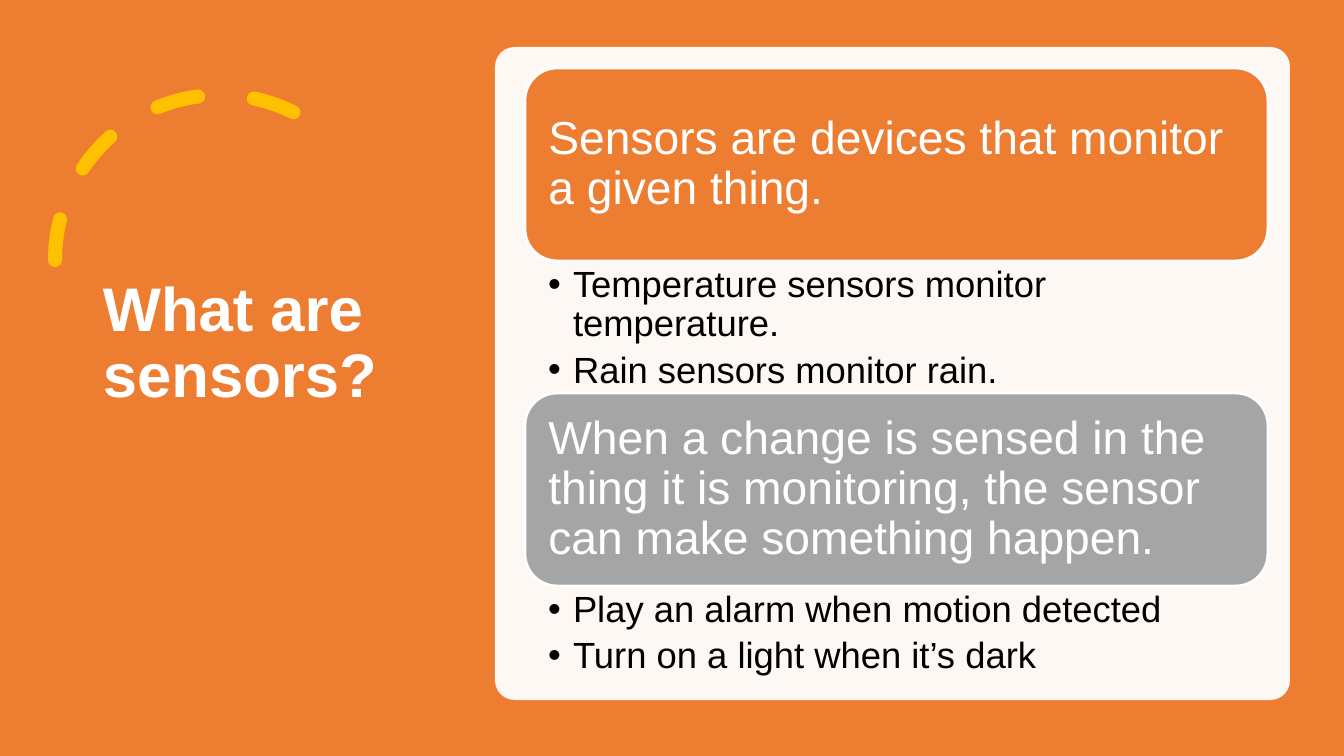
from dataclasses import dataclass

from lxml import etree
from pptx import Presentation
from pptx.dml.color import RGBColor
from pptx.enum.dml import MSO_LINE
from pptx.enum.shapes import MSO_SHAPE
from pptx.enum.text import MSO_ANCHOR, MSO_AUTO_SIZE, PP_ALIGN
from pptx.oxml.ns import qn
from pptx.util import Pt

RECTANGLE = MSO_SHAPE.RECTANGLE
ROUNDED = MSO_SHAPE.ROUNDED_RECTANGLE
ARC = MSO_SHAPE.ARC
DASH = MSO_LINE.DASH
LEFT = PP_ALIGN.LEFT
TOP = MSO_ANCHOR.TOP
MIDDLE = MSO_ANCHOR.MIDDLE
NO_AUTOFIT = MSO_AUTO_SIZE.NONE

SLIDE_WIDTH, SLIDE_HEIGHT = 1344, 756
EMU_PER_PX = 12192000 / SLIDE_WIDTH
TWO_CONTENT_LAYOUT = 3
COLUMN_LEFT, COLUMN_WIDTH = 525, 743
CARD_HEIGHT = 193
BULLET_INDENT = 25


@dataclass(frozen=True)
class Theme:
    font: str = "Arial"
    orange: str = "ED7D31"
    gray: str = "A5A5A5"
    yellow: str = "FFC000"
    white: str = "FFFFFF"
    black: str = "000000"
    title_size: int = 44
    card_size: int = 33
    list_size: int = 26


THEME = Theme()

SECTIONS = [
    (68, THEME.orange, "Sensors are devices that monitor a given thing.", 132,
     ["Temperature sensors monitor temperature.", "Rain sensors monitor rain."]),
    (393, THEME.gray,
     "When a change is sensed in the thing it is monitoring, "
     "the sensor can make something happen.", 94,
     ["Play an alarm when motion detected", "Turn on a light when it’s dark"]),
]


def px(length):
    return round(length * EMU_PER_PX)


def set_values(target, values):
    for name, value in values.items():
        setattr(target, name, value)


def place(shape, left, top, width, height):
    set_values(shape, {"left": px(left), "top": px(top),
                       "width": px(width), "height": px(height)})


def add_box(page, kind, bounds, fill=None, line=None, line_width=0):
    box = page.shapes.add_shape(kind, *map(px, bounds))
    box.shadow.inherit = False
    if fill:
        box.fill.solid()
        box.fill.fore_color.rgb = RGBColor.from_string(fill)
    else:
        box.fill.background()
    if line:
        box.line.color.rgb = RGBColor.from_string(line)
        box.line.width = Pt(line_width)
    else:
        box.line.fill.background()
    return box


def write_text(shape, lines, size, color, insets, anchor, bold=False, space_after=0):
    frame = shape.text_frame
    left, top, right, bottom = map(px, insets)
    set_values(frame, {
        "word_wrap": True, "auto_size": NO_AUTOFIT, "vertical_anchor": anchor,
        "margin_left": left, "margin_top": top,
        "margin_right": right, "margin_bottom": bottom,
    })
    for index, line in enumerate(lines):
        para = frame.add_paragraph() if index else frame.paragraphs[0]
        set_values(para, {"alignment": LEFT, "line_spacing": 0.9,
                          "space_before": Pt(0), "space_after": Pt(space_after)})
        span = para.add_run()
        span.text = line
        set_values(span.font, {"name": THEME.font, "size": Pt(size), "bold": bold})
        span.font.color.rgb = RGBColor.from_string(color)


def add_dashed_arc(page):
    arc = add_box(page, ARC, (55, 95, 330, 330), line=THEME.yellow, line_width=10)
    arc.adjustments[0] = 146.13
    arc.adjustments[1] = 0
    arc.line.dash_style = DASH
    properties = arc._element.spPr
    properties.find(qn("a:xfrm")).set("flipH", "1")
    properties.find(qn("a:ln")).set("cap", "rnd")


def add_panel(page):
    panel = add_box(page, ROUNDED, (495, 47, 795, 653), THEME.white)
    panel.adjustments[0] = 0.03
    color = panel._element.spPr.find(qn("a:solidFill"))[0]
    etree.SubElement(color, qn("a:alpha"), val="95000")


def bring_to_front(page, shape):
    page.shapes._spTree.append(shape._element)


def format_title(page, text):
    title = page.shapes.title
    bring_to_front(page, title)
    place(title, 93, 71, 326, 614)
    write_text(title, [text], THEME.title_size, THEME.white,
               (10, 5, 10, 72), MIDDLE, bold=True)


def add_card(page, top, fill, text):
    card = add_box(page, ROUNDED, (COLUMN_LEFT, top, COLUMN_WIDTH, CARD_HEIGHT),
                   fill, THEME.white, 2)
    write_text(card, [text], THEME.card_size, THEME.white, (14, 14, 14, 14), MIDDLE)


def format_list(page, body, top, height, items):
    bring_to_front(page, body)
    place(body, COLUMN_LEFT, top, COLUMN_WIDTH, height)
    write_text(body, items, THEME.list_size, THEME.black,
               (23, 5, 26, 5), TOP, space_after=5)
    for para in body.text_frame.paragraphs:
        properties = para._p.get_or_add_pPr()
        properties.set("marL", str(px(BULLET_INDENT)))
        properties.set("indent", str(-px(BULLET_INDENT)))
        etree.SubElement(properties, qn("a:buFont"), typeface=THEME.font)
        etree.SubElement(properties, qn("a:buChar"), char="•")


def main():
    deck = Presentation()
    set_values(deck, {"slide_width": px(SLIDE_WIDTH), "slide_height": px(SLIDE_HEIGHT)})
    page = deck.slides.add_slide(deck.slide_layouts[TWO_CONTENT_LAYOUT])
    bodies = list(page.placeholders)[1:]
    add_box(page, RECTANGLE, (0, 0, SLIDE_WIDTH, SLIDE_HEIGHT), THEME.orange)
    add_dashed_arc(page)
    format_title(page, "What are sensors?")
    add_panel(page)
    for body, (top, fill, heading, list_height, items) in zip(bodies, SECTIONS):
        add_card(page, top, fill, heading)
        format_list(page, body, top + CARD_HEIGHT, list_height, items)
    deck.save("out.pptx")


if __name__ == "__main__":
    main()
